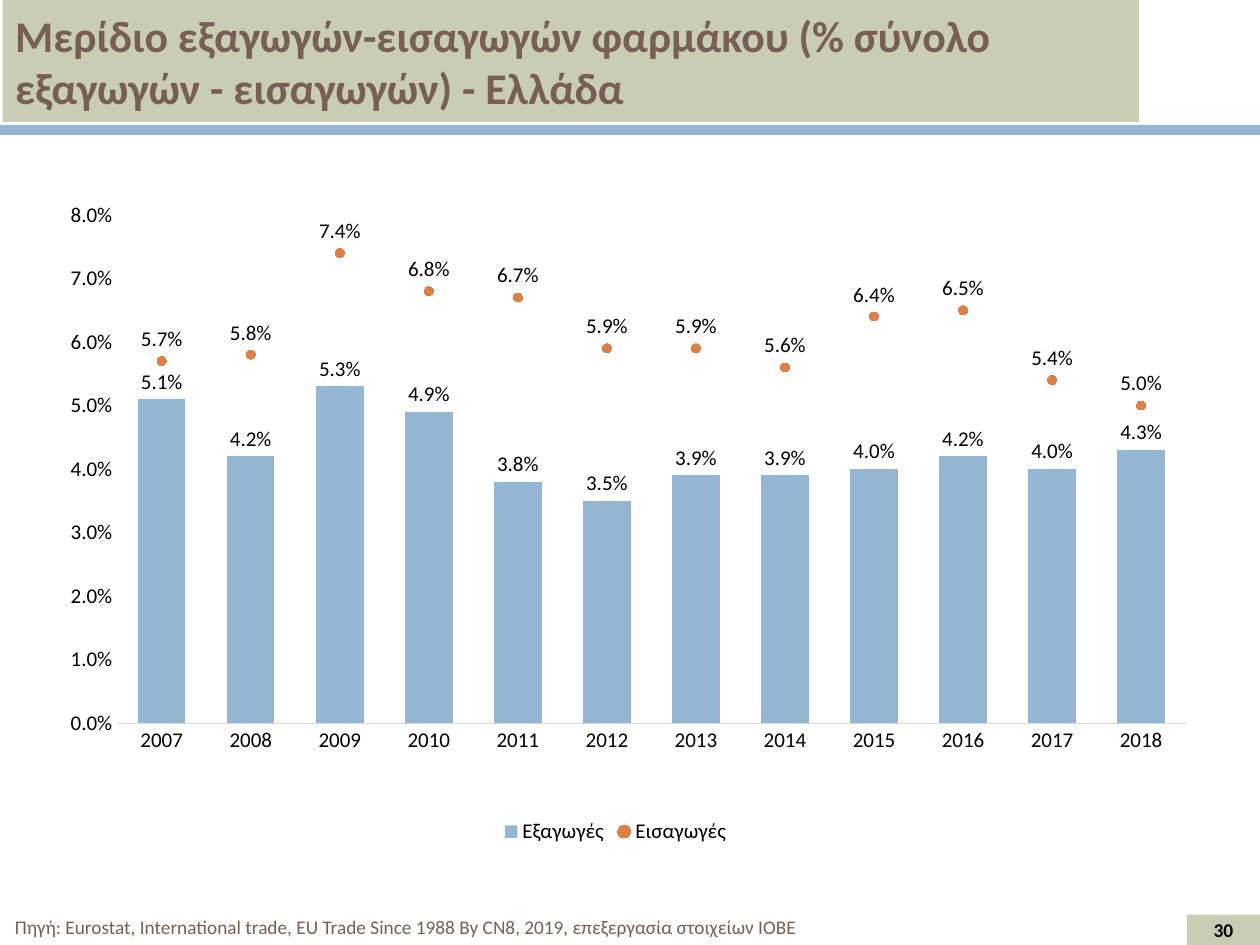
from dataclasses import dataclass

from lxml import etree
from pptx import Presentation
from pptx.chart.data import CategoryChartData
from pptx.dml.color import RGBColor
from pptx.enum.chart import (XL_CHART_TYPE, XL_LABEL_POSITION, XL_LEGEND_POSITION,
                             XL_MARKER_STYLE, XL_TICK_MARK)
from pptx.enum.shapes import MSO_SHAPE
from pptx.enum.text import MSO_ANCHOR, MSO_AUTO_SIZE, PP_ALIGN
from pptx.oxml import parse_xml
from pptx.oxml.ns import nsdecls, qn
from pptx.util import Inches, Pt

RECTANGLE = MSO_SHAPE.RECTANGLE
MIDDLE = MSO_ANCHOR.MIDDLE
NO_TICK = XL_TICK_MARK.NONE
LEFT, CENTER, JUSTIFY = PP_ALIGN.LEFT, PP_ALIGN.CENTER, PP_ALIGN.JUSTIFY

FONT = "Calibri"
PERCENT = "0.0%"
COLORS = {
    "sage": "C9CDB3",
    "blue": "94B6D2",
    "orange": "DD8047",
    "brown": "775F55",
    "black": "000000",
    "white": "FFFFFF",
    "axis": "D9D9D9",
}

YEARS = [str(year) for year in range(2007, 2019)]
EXPORTS = [0.051, 0.042, 0.053, 0.049, 0.038, 0.035,
           0.039, 0.039, 0.040, 0.042, 0.040, 0.043]
IMPORTS = [0.057, 0.058, 0.074, 0.068, 0.067, 0.059,
           0.059, 0.056, 0.064, 0.065, 0.054, 0.050]


@dataclass
class Box:
    left: float
    top: float
    width: float
    height: float

    def lengths(self):
        return [Inches(n) for n in (self.left, self.top, self.width, self.height)]


@dataclass
class Style:
    size: float
    color: str = "black"
    bold: bool = False


CHART_STYLE = Style(12)
BANDS = [
    (Box(9.42, 7.26, 0.58, 0.24), "sage"),
    (Box(0, 0.99, 10, 0.08), "blue"),
]


def rgb(name: str) -> RGBColor:
    return RGBColor.from_string(COLORS[name])


def paint(fill, color: str) -> None:
    fill.solid()
    fill.fore_color.rgb = rgb(color)


def style_font(font, style: Style) -> None:
    font.name = FONT
    font.size = Pt(style.size)
    font.bold = style.bold
    font.color.rgb = rgb(style.color)


def add_band(slide, box: Box, color: str) -> None:
    band = slide.shapes.add_shape(RECTANGLE, *box.lengths())
    band.shadow.inherit = False
    paint(band.fill, color)
    band.line.fill.background()


def write(shape, text: str, style: Style, alignment):
    frame = shape.text_frame
    frame.word_wrap = True
    frame.auto_size = MSO_AUTO_SIZE.NONE
    frame.text = text
    paragraph = frame.paragraphs[0]
    paragraph.alignment = alignment
    style_font(paragraph.runs[0].font, style)
    return paragraph


def add_title(slide, box: Box, text: str) -> None:
    title = slide.shapes.title
    title.left, title.top, title.width, title.height = box.lengths()
    paint(title.fill, "sage")
    title.text_frame.vertical_anchor = MIDDLE
    write(title, text, Style(25, "brown", True), LEFT)


def move_last_series_to_line(chart) -> None:
    """Turn the last column series into a line plot on the same axes."""
    bar_chart = chart.plots[0]._element
    series = bar_chart.findall(qn("c:ser"))[-1]
    for invert in series.findall(qn("c:invertIfNegative")):
        series.remove(invert)
    line_chart = parse_xml(
        f'<c:lineChart {nsdecls("c")}><c:grouping val="standard"/>'
        '<c:varyColors val="0"/><c:marker val="1"/></c:lineChart>')
    line_chart.insert(2, series)
    for axis in bar_chart.findall(qn("c:axId")):
        etree.SubElement(line_chart, qn("c:axId")).set("val", axis.get("val"))
    bar_chart.addnext(line_chart)


def set_plot_layout(chart, box: Box) -> None:
    """Place the inner plot area, in fractions of the chart."""
    plot_area = chart.plots[0]._element.getparent()
    for layout in plot_area.findall(qn("c:layout")):
        plot_area.remove(layout)
    settings = [("layoutTarget", "inner"), ("xMode", "edge"), ("yMode", "edge"),
                ("x", box.left), ("y", box.top), ("w", box.width), ("h", box.height)]
    items = "".join(f'<c:{tag} val="{value}"/>' for tag, value in settings)
    plot_area.insert(0, parse_xml(
        f'<c:layout {nsdecls("c")}><c:manualLayout>{items}</c:manualLayout></c:layout>'))


def fill_chart_area(chart, color: str) -> None:
    chart_element = chart._chartSpace.find(qn("c:chart"))
    chart_element.addnext(parse_xml(
        f'<c:spPr {nsdecls("c", "a")}><a:solidFill><a:srgbClr val="{COLORS[color]}"/>'
        '</a:solidFill><a:ln><a:noFill/></a:ln></c:spPr>'))


def label_series(series, position) -> None:
    labels = series.data_labels
    labels.show_value = True
    labels.number_format = PERCENT
    labels.number_format_is_linked = False
    labels.position = position
    style_font(labels.font, CHART_STYLE)


def add_trade_chart(slide, box: Box) -> None:
    data = CategoryChartData(number_format=PERCENT)
    data.categories = YEARS
    data.add_series("Εξαγωγές", EXPORTS)
    data.add_series("Εισαγωγές", IMPORTS)
    chart = slide.shapes.add_chart(
        XL_CHART_TYPE.COLUMN_CLUSTERED, *box.lengths(), data).chart
    chart.has_title = False
    style_font(chart.font, CHART_STYLE)
    fill_chart_area(chart, "white")
    move_last_series_to_line(chart)
    set_plot_layout(chart, Box(0.078, 0.073, 0.905, 0.743))

    # Columns for exports, markers for imports
    columns, markers = chart.plots
    columns.gap_width = 88
    columns.vary_by_categories = False
    exports, imports = columns.series[0], markers.series[0]
    paint(exports.format.fill, "blue")
    label_series(exports, XL_LABEL_POSITION.OUTSIDE_END)
    imports.smooth = False
    imports.format.line.fill.background()
    imports.marker.style = XL_MARKER_STYLE.CIRCLE
    imports.marker.size = 5
    paint(imports.marker.format.fill, "orange")
    paint(imports.marker.format.line.fill, "orange")
    label_series(imports, XL_LABEL_POSITION.ABOVE)

    # Axes and legend
    for axis in (chart.category_axis, chart.value_axis):
        axis.major_tick_mark = axis.minor_tick_mark = NO_TICK
        axis.has_major_gridlines = False
        style_font(axis.tick_labels.font, CHART_STYLE)
    chart.category_axis.format.line.color.rgb = rgb("axis")
    chart.category_axis.format.line.width = Pt(0.75)
    values = chart.value_axis
    values.minimum_scale, values.maximum_scale, values.major_unit = 0, 0.08, 0.01
    values.format.line.fill.background()
    values.tick_labels.number_format = PERCENT
    values.tick_labels.number_format_is_linked = False
    chart.has_legend = True
    chart.legend.position = XL_LEGEND_POSITION.BOTTOM
    chart.legend.include_in_layout = False
    style_font(chart.legend.font, CHART_STYLE)


def main() -> None:
    presentation = Presentation()
    presentation.slide_width, presentation.slide_height = Inches(10), Inches(7.5)
    slide = presentation.slides.add_slide(presentation.slide_layouts[5])

    for box, color in BANDS:
        add_band(slide, box, color)
    add_title(slide, Box(0.02, 0, 9.02, 0.97),
              "Μερίδιο εξαγωγών-εισαγωγών φαρμάκου (% σύνολο εξαγωγών - εισαγωγών) - Ελλάδα")
    add_trade_chart(slide, Box(0.2, 1.31, 9.37, 5.43))

    # Source line and page number
    source = slide.shapes.add_textbox(*Box(0.02, 7.2, 9.31, 0.3).lengths())
    paragraph = write(source, "Πηγή: Eurostat, International trade, EU Trade Since 1988 By CN8, "
                      "2019, επεξεργασία στοιχείων ΙΟΒΕ", Style(11, "brown"), JUSTIFY)
    paragraph.line_spacing = 1.07
    paragraph.space_after = Pt(8)
    number = slide.shapes.add_textbox(*Box(9.42, 7.24, 0.58, 0.27).lengths())
    number.text_frame.vertical_anchor = MIDDLE
    write(number, "30", Style(11.1, bold=True), CENTER)

    presentation.save("out.pptx")


if __name__ == "__main__":
    main()
